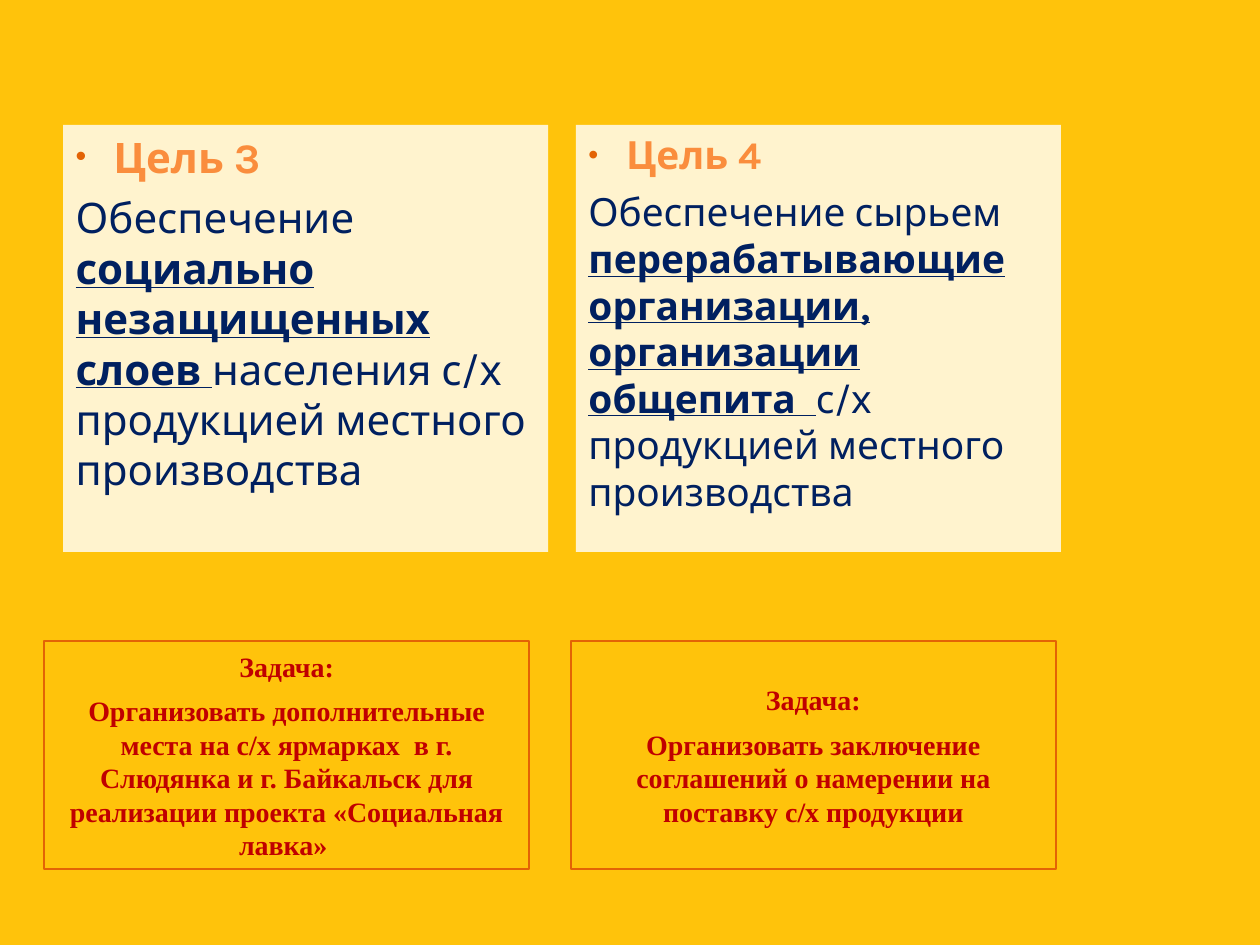
"""Build a slide with two goals and the task that belongs to each."""
from lxml import etree
from pptx import Presentation
from pptx.dml.color import RGBColor
from pptx.enum.text import MSO_ANCHOR as Anchor, MSO_AUTO_SIZE as AutoSize, PP_ALIGN as Align
from pptx.oxml.ns import qn
from pptx.util import Inches, Pt

COLORS = {"background": "FFC30B", "panel": "FFF3CE", "accent": "E36305",
          "heading": "FA8D3D", "goal": "002060", "task": "C00000"}
GOALS = [
    (0.5, 24, "Цель 3", ["Обеспечение ", "социально незащищенных слоев ",
                         "населения с/х продукцией местного производства"]),
    (4.57, 22.2, "Цель 4", ["Обеспечение сырьем ",
                            "перерабатывающие организации, организации общепита  ",
                            "с/х продукцией местного производства"]),
]
TASKS = [
    (0.35, "Организовать дополнительные места на с/х ярмарках  в г. Слюдянка и г. Байкальск "
           "для реализации проекта «Социальная лавка» "),
    (4.53, "Организовать заключение соглашений о намерении на поставку с/х продукции"),
]


def place(box, left, top, height, anchor):
    box.left, box.top = Inches(left), Inches(top)
    box.width, box.height = Inches(3.85), Inches(height)
    frame = box.text_frame
    frame.word_wrap = True
    frame.auto_size = AutoSize.NONE
    frame.vertical_anchor = anchor
    return frame


def style(para, font_name, size, color, bullet=False):
    props = para._p.get_or_add_pPr()
    indent = Inches(0.3) if bullet else 0
    props.set("marL", str(indent))
    props.set("indent", str(-indent))
    if bullet:
        bullet_color = etree.SubElement(props, qn("a:buClr"))
        etree.SubElement(bullet_color, qn("a:srgbClr"), val=COLORS["accent"])
        etree.SubElement(props, qn("a:buSzPct"), val="73000")
        etree.SubElement(props, qn("a:buFont"), typeface="Arial")
        etree.SubElement(props, qn("a:buChar"), char="•")
    else:
        etree.SubElement(props, qn("a:buNone"))
    para.space_before = Pt(0 if bullet else 6)
    para.line_spacing = Pt(size * 1.2)
    for span in para.runs:
        span.font.name = font_name
        span.font.size = Pt(size)
        span.font.bold = True
        span.font.color.rgb = RGBColor.from_string(COLORS[color])


deck = Presentation()
deck.slide_width, deck.slide_height = Inches(10), Inches(7.5)
page = deck.slides.add_slide(deck.slide_layouts.get_by_name("Comparison"))
page.background.fill.solid()
page.background.fill.fore_color.rgb = RGBColor.from_string(COLORS["background"])
title = page.shapes.title
title.element.getparent().remove(title.element)
bodies = {box.placeholder_format.idx: box for box in page.placeholders}

for index, (left, text) in zip((1, 3), TASKS):
    box = bodies[index]
    frame = place(box, left, 5.09, 1.81, Anchor.MIDDLE)
    box.line.color.rgb = RGBColor.from_string(COLORS["accent"])
    box.line.width = Pt(1)
    frame.text = f"Задача:\n{text}"
    for para in frame.paragraphs:
        style(para, "Times New Roman", 16, "task")
        para.alignment = Align.CENTER
    frame.paragraphs[0].space_before = Pt(0)

for index, (left, size, heading, parts) in zip((2, 4), GOALS):
    box = bodies[index]
    frame = place(box, left, 0.99, 3.39, Anchor.TOP)
    box.fill.solid()
    box.fill.fore_color.rgb = RGBColor.from_string(COLORS["panel"])
    frame.text = heading
    style(frame.paragraphs[0], "Karla", size, "heading", bullet=True)
    para = frame.add_paragraph()
    for part in parts:
        para.add_run().text = part
    style(para, "Karla", size, "goal")
    for span, stressed in zip(para.runs, (False, True, False)):
        span.font.bold = span.font.underline = stressed

deck.save("out.pptx")
